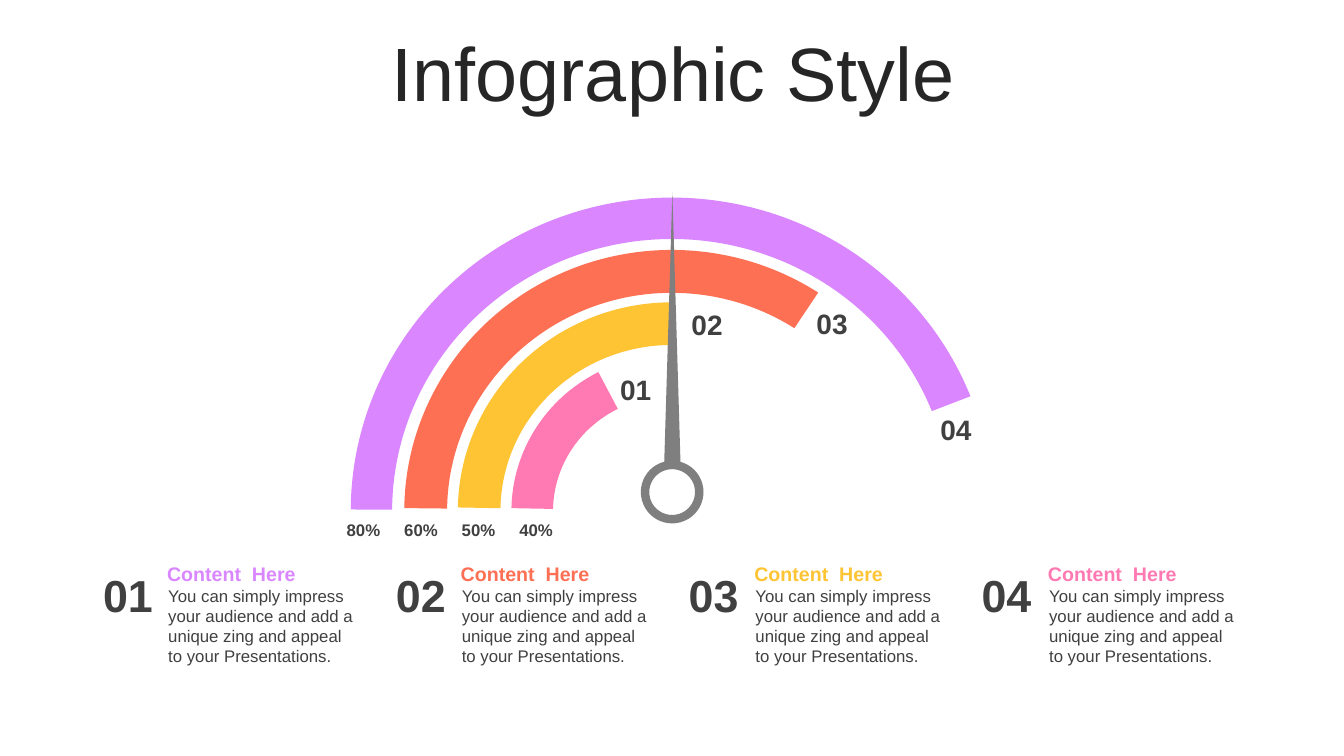
"""Builds a slide with a gauge of four arcs, a needle and four captions."""
from pptx import Presentation
from pptx.dml import color
from pptx.enum import shapes, text
from pptx.util import Cm, Pt

TITLE = "Infographic Style"
HEADING = "Content  Here"
BODY = ("You can simply impress your audience and add a unique zing "
        "and appeal to your Presentations.")
INK, GREY, WHITE = "404040", "7F7F7F", "FFFFFF"

# share, colour, start and end angle in degrees, band thickness
ARCS = [
    ("80%", "DA87FF", 180.29, 338.97, 0.066),
    ("60%", "FE7054", 180.64, 303.83, 0.082),
    ("50%", "FEC434", 180.97, 269.89, 0.102),
    ("40%", "FF79B2", 181.06, 242.17, 0.133),
]
ARC_LABELS = [("04", 23.39, 10.26), ("03", 20.27, 7.59),
              ("02", 17.12, 7.62), ("01", 15.32, 9.25)]
HUB_X, HUB_Y = 16.94, 12.4
HUB_RINGS = [(2.54, 0.083, WHITE), (1.58, 0.135, GREY)]
ANGLE_UNIT = 0.6

LEFT, CENTER = text.PP_ALIGN.LEFT, text.PP_ALIGN.CENTER
TOP, MIDDLE = text.MSO_ANCHOR.TOP, text.MSO_ANCHOR.MIDDLE
KIND = shapes.MSO_SHAPE


def rgb(value):
    """Turn a hex string into a colour."""
    return color.RGBColor.from_string(value)


def write(box, words, size, ink, bold=True, align=CENTER, anchor=TOP):
    """Put one formatted paragraph into a box."""
    frame = box.text_frame
    frame.word_wrap = True
    frame.vertical_anchor = anchor
    para = frame.paragraphs[0]
    para.alignment = align
    span = para.add_run()
    span.text = words
    for name, value in {"name": "Arial", "size": Pt(size), "bold": bold}.items():
        setattr(span.font, name, value)
    span.font.color.rgb = rgb(ink)
    return para


def add_label(page, place, *words, **style):
    """Add a text box at a place given in centimetres."""
    write(page.shapes.add_textbox(*map(Cm, place)), *words, **style)


def add_figure(page, kind, place, fill, adjustments):
    """Add a filled preset shape without outline."""
    figure = page.shapes.add_shape(kind, *map(Cm, place))
    for index, value in enumerate(adjustments):
        figure.adjustments[index] = value
    figure.fill.solid()
    figure.fill.fore_color.rgb = rgb(fill)
    figure.line.fill.background()
    figure.shadow.inherit = False


def add_title(page):
    """Place and format the title."""
    box = page.shapes.title
    place = {"left": 0.89, "top": 0.94, "width": 32.16, "height": 2.01}
    for name, value in place.items():
        setattr(box, name, Cm(value))
    para = write(box, TITLE, 54, "262626", bold=False, anchor=MIDDLE)
    para.line_spacing = 0.9
    para.space_before = Pt(10)


def add_gauge(page):
    """Draw the arcs, hub, labels and needle."""
    for i, (share, fill, start, end, band) in enumerate(ARCS):
        place = (8.84 + 1.35 * i, 4.98 + 1.32 * i, 16.18 - 2.7 * i, 15.8 - 2.64 * i)
        add_figure(page, KIND.BLOCK_ARC, place, fill,
                   (start * ANGLE_UNIT, end * ANGLE_UNIT, band))
        add_label(page, (8.18 + 1.45 * i, 12.98, 1.96, 0.76), share, 12, INK,
                  anchor=MIDDLE)
    for size, band, fill in HUB_RINGS:
        place = (HUB_X - size / 2, HUB_Y - size / 2, size, size)
        add_figure(page, KIND.DONUT, place, fill, (band,))
    for number, left, top in ARC_LABELS:
        add_label(page, (left, top, 1.4, 1.12), number, 20, INK)
    add_figure(page, KIND.ISOSCELES_TRIANGLE, (16.74, 4.85, 0.41, 6.81), GREY, (0.5,))


def add_captions(page):
    """Write the row of numbered captions."""
    for i, (_, ink, *_) in enumerate(ARCS):
        shift = 7.4 * i
        add_label(page, (3.96 + shift, 14.02, 5.23, 0.86), HEADING, 14, ink,
                  align=LEFT, anchor=MIDDLE)
        add_label(page, (3.99 + shift, 14.63, 5.23, 2.31), BODY, 12, INK,
                  bold=False, align=LEFT)
        add_label(page, (2.16 + 7.38 * i, 14.17, 2.13, 1.63), f"{i + 1:02}", 32, INK)


def main():
    """Build and save the deck."""
    deck = Presentation()
    deck.slide_width, deck.slide_height = Cm(33.87), Cm(19.05)
    page = deck.slides.add_slide(deck.slide_layouts[5])
    add_title(page)
    add_gauge(page)
    add_captions(page)
    deck.save("out.pptx")


if __name__ == "__main__":
    main()
